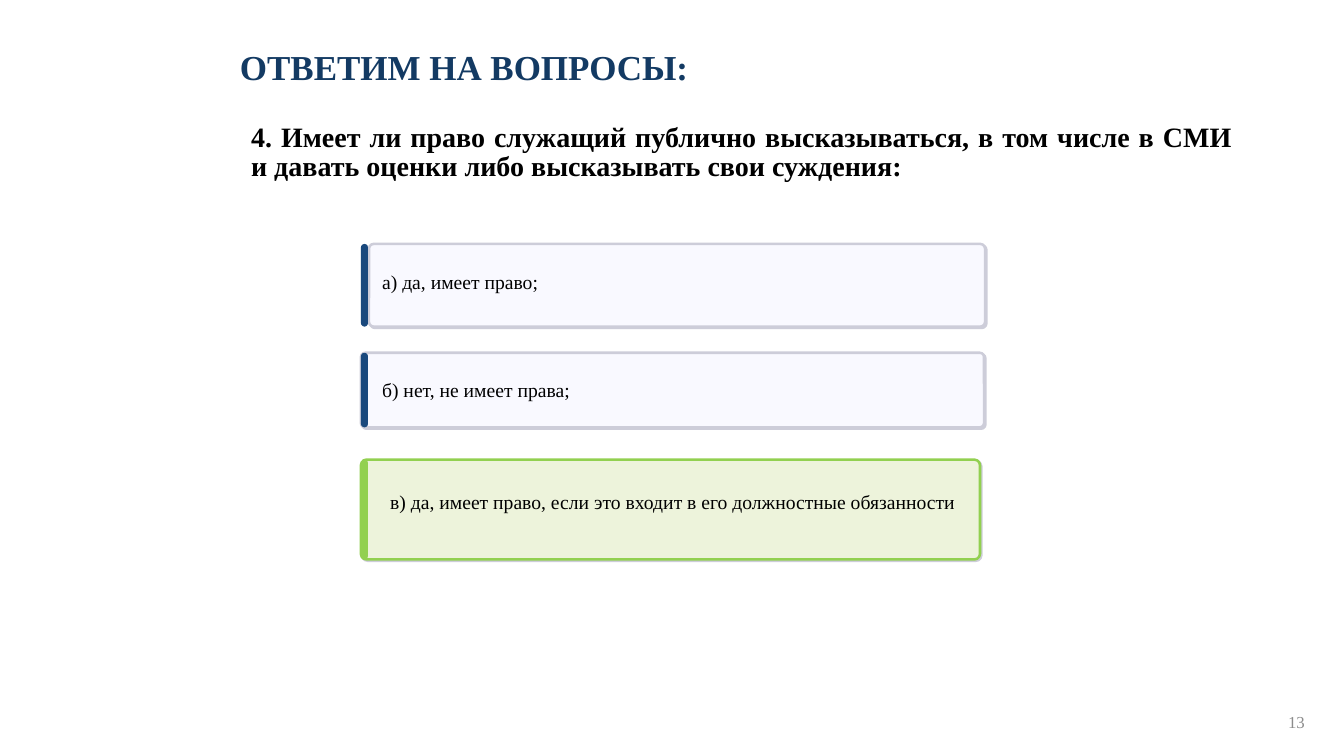
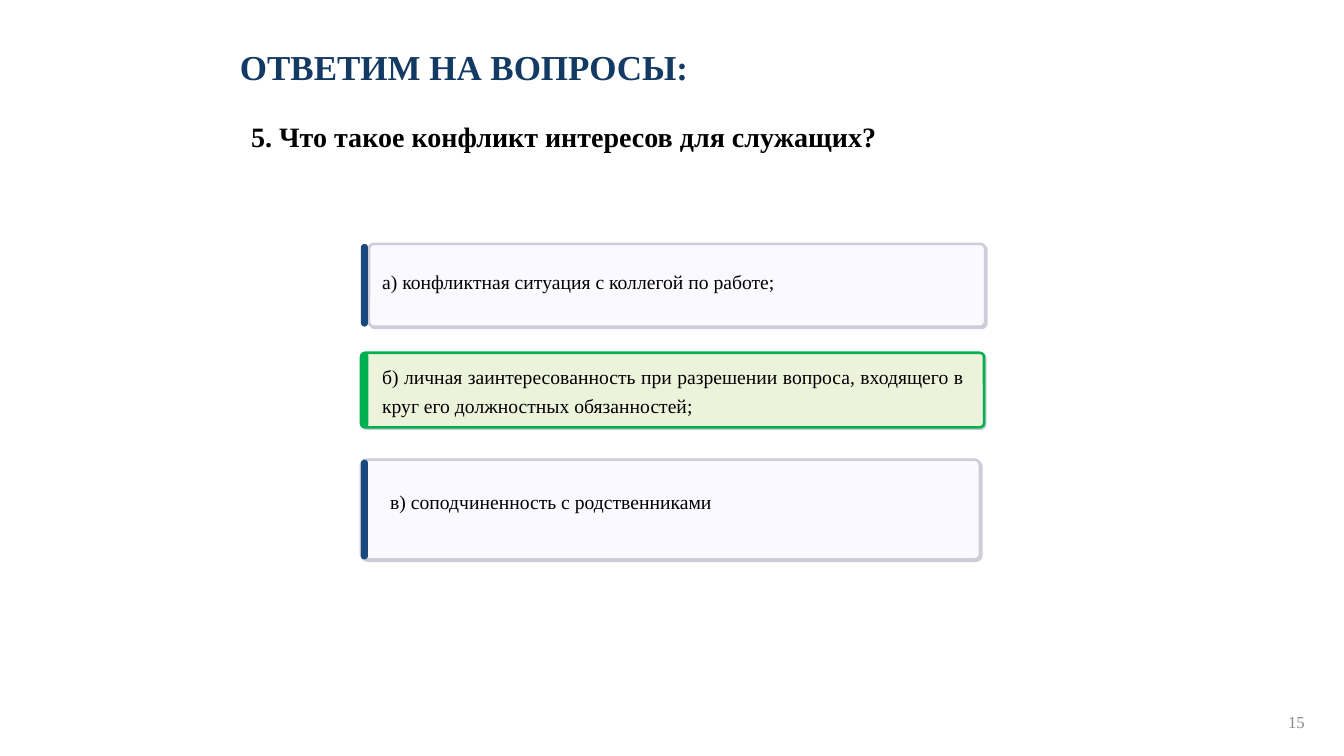
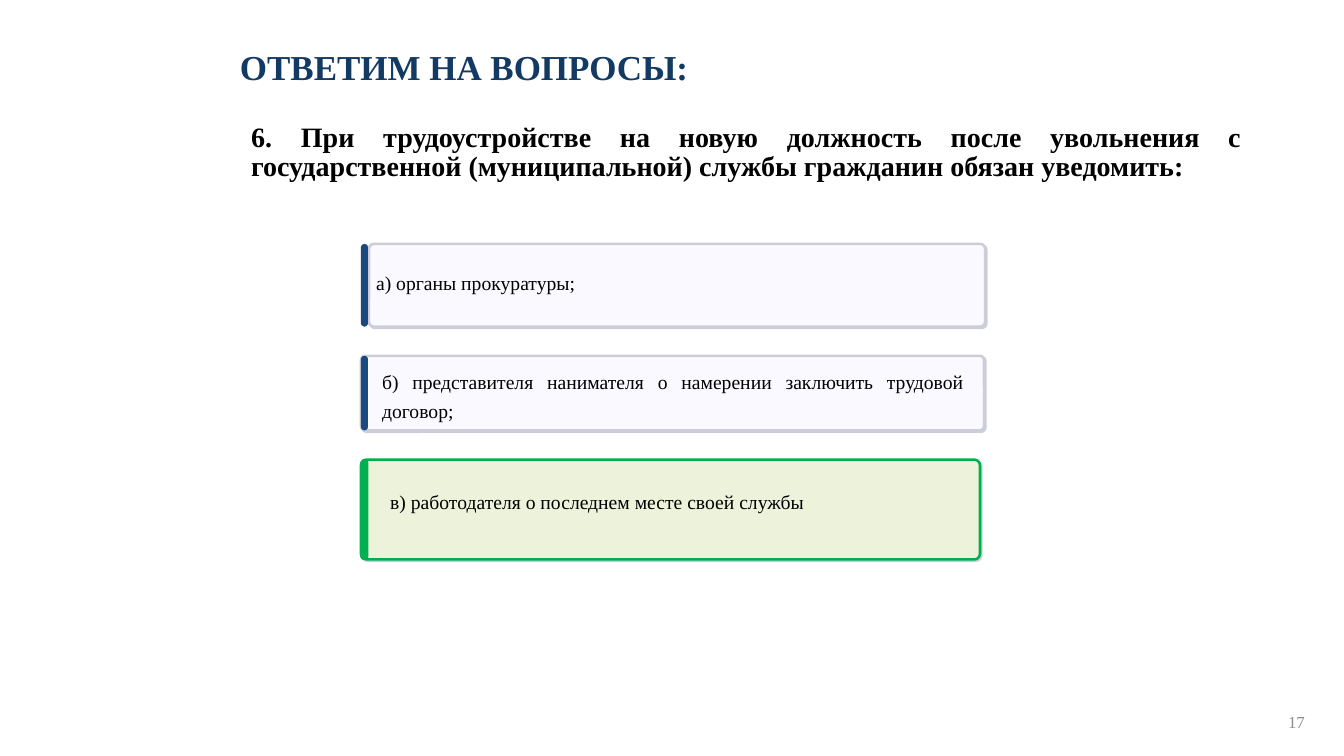
from lxml import etree
from pptx import Presentation
from pptx.dml.color import RGBColor
from pptx.enum.shapes import MSO_SHAPE
from pptx.enum.text import MSO_ANCHOR, PP_ALIGN
from pptx.oxml.ns import qn
from pptx.util import Inches, Pt

ROUNDED = MSO_SHAPE.ROUNDED_RECTANGLE
MIDDLE = MSO_ANCHOR.MIDDLE
LEFT, RIGHT, JUSTIFY = PP_ALIGN.LEFT, PP_ALIGN.RIGHT, PP_ALIGN.JUSTIFY

COLORS = {
    "title": "133A63",
    "text": "000000",
    "page": "8C8C8C",
    "card": "F9F9FF",
    "border": "CDCDD9",
    "accent": "1A497D",
    "correct_card": "EDF3DB",
    "lime": "92D050",
    "green": "00B050",
}
FONT = "Times New Roman"
HEADING = "ОТВЕТИМ НА ВОПРОСЫ:"
ACCENT_LEFT, ACCENT_WIDTH = 3.58, 0.07
CARD_ROUNDING = 0.056

# Card left, width and height; text width and height
ROWS = [
    (3.66, 6.11, 0.82, 7.22, 0.43),
    (3.58, 6.18, 0.74, 5.77, 0.59),
    (3.58, 6.14, 0.99, 5.79, 0.61),
]

# Each answer: wording, card top, text left, text top
QUIZ = [
    {
        "page": "13",
        "question": "4. Имеет ли право служащий публично высказываться, в том числе в СМИ "
                    "\vи давать оценки либо высказывать свои суждения:",
        "answers": [
            ("а) да, имеет право;", 2.42, 3.79, 2.62),
            ("б) нет, не имеет права;", 3.5, 3.79, 3.69),
            ("в) да, имеет право, если это входит в его должностные обязанности",
             4.56, 3.87, 4.8),
        ],
        "correct": 2,
        "highlight": "lime",
    },
    {
        "page": "15",
        "question": "5. Что такое конфликт интересов для служащих?",
        "answers": [
            ("а) конфликтная ситуация с коллегой по работе;", 2.42, 3.79, 2.62),
            ("б) личная заинтересованность при разрешении вопроса, входящего в "
             "круг его должностных обязанностей;", 3.5, 3.79, 3.56),
            ("в) соподчиненность с родственниками", 4.56, 3.87, 4.8),
        ],
        "correct": 1,
        "highlight": "green",
    },
    {
        "page": "17",
        "question": "6. При трудоустройстве на новую должность после увольнения с "
                    "государственной (муниципальной) службы гражданин обязан уведомить:",
        "answers": [
            ("а) органы прокуратуры;", 2.42, 3.73, 2.63),
            ("б) представителя нанимателя о намерении заключить трудовой договор;",
             3.53, 3.79, 3.61),
            ("в) работодателя о последнем месте своей службы", 4.56, 3.87, 4.8),
        ],
        "correct": 2,
        "highlight": "green",
    },
]


def write(shape, box, text, size, color, align, bold=False, spacing=None):
    """Place a text shape at box (inches) and fill it with one styled paragraph."""
    shape.left, shape.top, shape.width, shape.height = map(Inches, box)
    frame = shape.text_frame
    frame.word_wrap = True
    frame.text = text
    paragraph = frame.paragraphs[0]
    paragraph.alignment = align
    paragraph.line_spacing = spacing
    font = paragraph.font
    font.name, font.size, font.bold = FONT, Pt(size), bold
    font.color.rgb = RGBColor.from_string(COLORS[color])
    return frame


def add_panel(group, box, rounding, fill, line=None, line_width=0.75):
    """Add a rounded panel without a shadow, outlined only if a line colour is given."""
    panel = group.shapes.add_shape(ROUNDED, *map(Inches, box))
    panel.adjustments[0] = rounding
    panel.shadow.inherit = False
    panel.fill.solid()
    panel.fill.fore_color.rgb = RGBColor.from_string(COLORS[fill])
    if line:
        panel.line.color.rgb = RGBColor.from_string(COLORS[line])
        panel.line.width = Pt(line_width)
    else:
        panel.line.fill.background()
    return panel


prs = Presentation()
prs.slide_width, prs.slide_height = Inches(13.33), Inches(7.5)
title_only = prs.slide_layouts[5]

for quiz in QUIZ:
    slide = prs.slides.add_slide(title_only)
    heading = write(slide.shapes.title, (2.28, 0.19, 10.28, 0.99), HEADING,
                    25, "title", LEFT, bold=True, spacing=0.9)
    heading.vertical_anchor = MIDDLE

    texts = [((2.49, 1.23, 9.82, 1.43), quiz["question"], 20, True)]
    for row, (answer, top, text_left, text_top) in enumerate(quiz["answers"]):
        left, width, height, text_width, text_height = ROWS[row]
        if row == quiz["correct"]:
            fill, border, accent = "correct_card", quiz["highlight"], quiz["highlight"]
        else:
            fill, border, accent = "card", "border", "accent"
        group = slide.shapes.add_group_shape()
        card = add_panel(group, (left, top, width, height), CARD_ROUNDING,
                         fill, border, 1.8)
        shadow = etree.SubElement(card.element.spPr.find(qn("a:effectLst")),
                                  qn("a:outerShdw"), dist=str(Pt(1.4)),
                                  dir=str(45 * 60000), algn="tl", rotWithShape="0")
        etree.SubElement(shadow, qn("a:srgbClr"), val=COLORS["border"])
        add_panel(group, (ACCENT_LEFT, top, ACCENT_WIDTH, height), 0.5, accent,
                  "green" if accent == "green" else None)
        texts.append(((text_left, text_top, text_width, text_height), answer, 14, False))

    for box, text, size, bold in texts:
        frame = write(slide.shapes.add_textbox(0, 0, 0, 0), box, text, size,
                      "text", JUSTIFY, bold, Pt(20.8))
        frame.margin_left = frame.margin_right = 0
        frame.margin_top = frame.margin_bottom = 0

    number = write(slide.shapes.add_textbox(0, 0, 0, 0), (10.04, 6.96, 3, 0.4),
                   quiz["page"], 12, "page", RIGHT)
    number.vertical_anchor = MIDDLE

prs.save("out.pptx")
